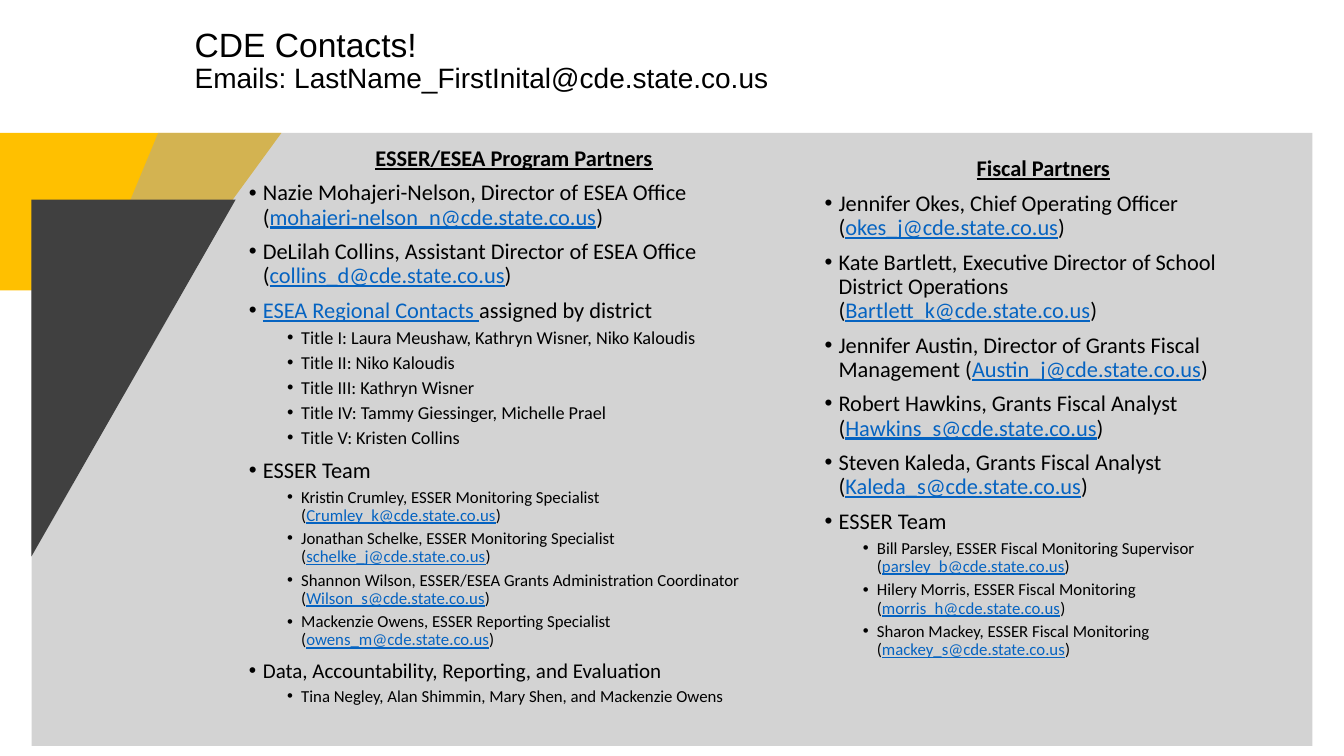
from lxml import etree
from pptx import Presentation
from pptx.dml.color import RGBColor
from pptx.enum.text import MSO_ANCHOR, PP_ALIGN
from pptx.oxml.ns import qn
from pptx.util import Pt

CENTER = PP_ALIGN.CENTER
TOP = MSO_ANCHOR.TOP
BLACK, LINK = "000000", "0563C1"
YELLOW, GRAY, DARK = "FFC000", "A6A6A6", "404040"

BAND_TOP, BAND_LEFT = 95, 22.5
YELLOW_CORNER = [(0, BAND_TOP), (201, BAND_TOP), (118.8, 207.5), (0, 207.5)]
GRAY_PANEL = [(113, BAND_TOP), (937.5, BAND_TOP), (937.5, 532.8),
              (BAND_LEFT, 532.8), (BAND_LEFT, 157.7), (87, 157.7)]
DARK_TRIANGLE = [(BAND_LEFT, 142.6), (168.3, 142.6), (BAND_LEFT, 397.4)]

# Bullet level: (left margin, space before)
LEVELS = [(10, 7.5), (37.4, 3.8)]
HANG = 10

# (level, size, text); every second part between bars is a link
PROGRAM_PARTNERS = [
    (0, 16, "Nazie Mohajeri-Nelson, Director of ESEA Office (|mohajeri-nelson_n@cde.state.co.us|)"),
    (0, 16, "DeLilah Collins, Assistant Director of ESEA Office (|collins_d@cde.state.co.us|)"),
    (0, 16, "|ESEA Regional Contacts |assigned by district"),
    (1, 13, "Title I: Laura Meushaw, Kathryn Wisner, Niko Kaloudis"),
    (1, 13, "Title II: Niko Kaloudis"),
    (1, 13, "Title III: Kathryn Wisner"),
    (1, 13, "Title IV: Tammy Giessinger, Michelle Prael"),
    (1, 13, "Title V: Kristen Collins"),
    (0, 16, "ESSER Team"),
    (1, 12, "Kristin Crumley, ESSER Monitoring Specialist (|Crumley_k@cde.state.co.us|)"),
    (1, 12, "Jonathan Schelke, ESSER Monitoring Specialist (|schelke_j@cde.state.co.us|)"),
    (1, 12, "Shannon Wilson, ESSER/ESEA Grants Administration Coordinator (|Wilson_s@cde.state.co.us|)"),
    (1, 12, "Mackenzie Owens, ESSER Reporting Specialist (|owens_m@cde.state.co.us|)"),
    (0, 15, "Data, Accountability, Reporting, and Evaluation"),
    (1, 12, "Tina Negley, Alan Shimmin, Mary Shen, and Mackenzie Owens"),
]
FISCAL_PARTNERS = [
    (0, 16, "Jennifer Okes, Chief Operating Officer (|okes_j@cde.state.co.us|)"),
    (0, 16, "Kate Bartlett, Executive Director of School District Operations (|Bartlett_k@cde.state.co.us|)"),
    (0, 16, "Jennifer Austin, Director of Grants Fiscal Management (|Austin_j@cde.state.co.us|)"),
    (0, 16, "Robert Hawkins, Grants Fiscal Analyst (|Hawkins_s@cde.state.co.us|)"),
    (0, 16, "Steven Kaleda, Grants Fiscal Analyst (|Kaleda_s@cde.state.co.us|)"),
    (0, 16, "ESSER Team"),
    (1, 12, "Bill Parsley, ESSER Fiscal Monitoring Supervisor (|parsley_b@cde.state.co.us|)"),
    (1, 12, "Hilery Morris, ESSER Fiscal Monitoring (|morris_h@cde.state.co.us|)"),
    (1, 12, "Sharon Mackey, ESSER Fiscal Monitoring (|mackey_s@cde.state.co.us|)"),
]


def rgb(color):
    return RGBColor.from_string(color)


def set_attrs(obj, values):
    for name, value in values.items():
        setattr(obj, name, value)


def add_polygon(s, points, color, opacity=100):
    corners = [(Pt(x), Pt(y)) for x, y in points]
    builder = s.shapes.build_freeform(*corners[0], scale=1.0)
    builder.add_line_segments(corners[1:], close=True)
    sp = builder.convert_to_shape()
    sp.shadow.inherit = False
    sp.line.fill.background()
    sp.fill.solid()
    sp.fill.fore_color.rgb = rgb(color)
    if opacity < 100:
        clr = sp.fill._xPr.find(".//" + qn("a:srgbClr"))
        etree.SubElement(clr, qn("a:alpha"), val=str(opacity * 1000))


def add_text_box(s, left, top, width, height, bottom_inset=0):
    tf = s.shapes.add_textbox(Pt(left), Pt(top), Pt(width), Pt(height)).text_frame
    set_attrs(tf, {"word_wrap": True, "vertical_anchor": TOP, "margin_left": 0,
                   "margin_top": 0, "margin_right": 0,
                   "margin_bottom": Pt(bottom_inset)})
    return tf


def add_run(p, text, size, font="Calibri", color=BLACK, **styles):
    r = p.add_run()
    r.text = text
    set_attrs(r.font, {"name": font, "size": Pt(size), **styles})
    r.font.color.rgb = rgb(color)


def add_bullet(p, level):
    left, before = LEVELS[level]
    set_attrs(p, {"level": level, "line_spacing": 0.9, "space_before": Pt(before)})
    pPr = p._p.get_or_add_pPr()
    pPr.set("marL", str(Pt(left)))
    pPr.set("indent", str(-Pt(HANG)))
    bullet_color = etree.SubElement(pPr, qn("a:buClr"))
    etree.SubElement(bullet_color, qn("a:srgbClr"), val=BLACK)
    etree.SubElement(pPr, qn("a:buFont"), typeface="Arial")
    etree.SubElement(pPr, qn("a:buChar"), char="•")


def add_title(s):
    tf = add_text_box(s, 139, 20, 479, 60)
    lines = [("CDE Contacts!", 24),
             ("Emails: LastName_FirstInital@cde.state.co.us", 20)]
    for i, (text, size) in enumerate(lines):
        p = tf.add_paragraph() if i else tf.paragraphs[0]
        p.line_spacing = 0.9
        add_run(p, text, size, "Arial")


def add_contacts(s, box, heading, contacts):
    tf = add_text_box(s, *box, bottom_inset=2)
    p = tf.paragraphs[0]
    set_attrs(p, {"alignment": CENTER, "line_spacing": 0.9})
    add_run(p, heading, 16, bold=True, underline=True)
    for level, size, text in contacts:
        p = tf.add_paragraph()
        add_bullet(p, level)
        for i, part in enumerate(text.split("|")):
            if part and i % 2:
                add_run(p, part, size, color=LINK, underline=True)
            elif part:
                add_run(p, part, size)


def main():
    prs = Presentation()
    prs.slide_width, prs.slide_height = Pt(960), Pt(540)
    s = prs.slides.add_slide(prs.slide_layouts[6])
    add_polygon(s, YELLOW_CORNER, YELLOW)
    add_polygon(s, GRAY_PANEL, GRAY, opacity=49)
    add_polygon(s, DARK_TRIANGLE, DARK)
    add_contacts(s, (177.8, 105, 378.7, 384.5), "ESSER/ESEA Program Partners", PROGRAM_PARTNERS)
    add_title(s)
    add_contacts(s, (589, 112.3, 312.5, 384.5), "Fiscal Partners", FISCAL_PARTNERS)
    prs.save("out.pptx")


if __name__ == "__main__":
    main()
